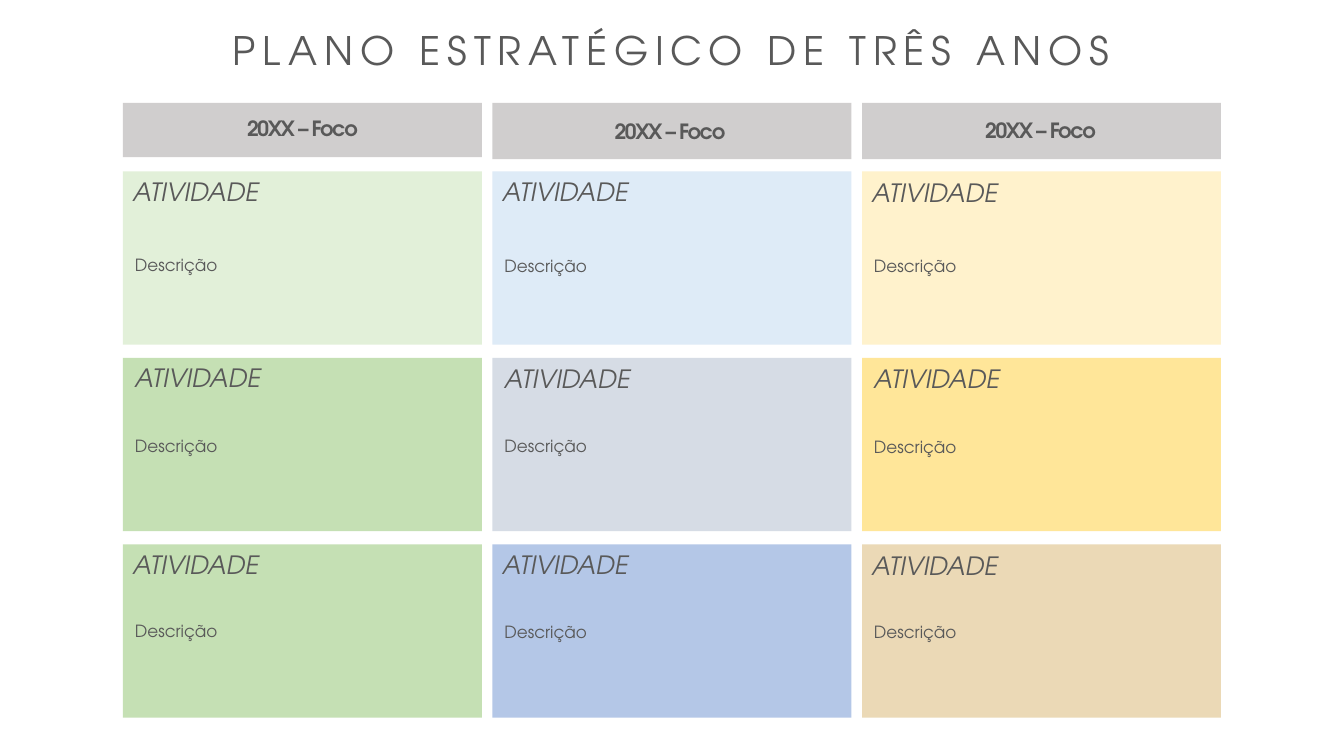
"""Build a three-year strategic plan slide."""
from dataclasses import dataclass

import pptx
import pptx.dml.color
import pptx.enum.shapes
import pptx.enum.text
import pptx.util
from pptx.util import Inches


@dataclass(frozen=True)
class Theme:
    """Colours, font and type sizes of the slide."""
    font: str = "TeX Gyre Adventor"
    text: str = "595959"
    header: str = "D0CECE"
    columns: tuple = (
        ("E2F0D9", "C5E0B4", "C5E0B4"),
        ("DEEBF7", "D6DCE5", "B4C7E7"),
        ("FFF2CC", "FFE699", "EBD9B6"),
    )
    title_size: int = 28
    header_size: int = 15
    activity_size: int = 18
    description_size: int = 12


THEME = Theme()
GRID_LEFT, GRID_RIGHT = 1.22, 12.11
CARD_WIDTH, CARD_HEIGHT = 3.56, 1.72
COLUMN_STEP = (GRID_RIGHT - GRID_LEFT - CARD_WIDTH) / 2
HEADER_TOP = 1.02
CARD_TOP, ROW_STEP = 1.7, 1.85
HEADER_HEIGHTS = (0.54, 0.56, 0.56)
HEADER_TEXT_TOPS = (1.1, 1.13, 1.12)
HEADER_TEXT_SHIFTS = (0, -0.02, -0.01)
ACTIVITY_SHIFTS = (0, 0.02, 0)
COLUMN_TEXT_DROPS = (0, 0.005, 0.01)
DESCRIPTION_TOPS = (2.48, 4.27, 6.11)


def write_text(box, text, size, bold=False, italic=False, centered=False, spacing=0):
    """Write one formatted paragraph into a text box or placeholder."""
    frame = box.text_frame
    frame.word_wrap = True
    frame.auto_size = pptx.enum.text.MSO_AUTO_SIZE.SHAPE_TO_FIT_TEXT
    frame.vertical_anchor = pptx.enum.text.MSO_ANCHOR.TOP
    para = frame.paragraphs[0]
    alignment = pptx.enum.text.PP_ALIGN
    para.alignment = alignment.CENTER if centered else alignment.LEFT
    span = para.add_run()
    span.text = text
    span.font.name = THEME.font
    span.font.size = pptx.util.Pt(size)
    span.font.bold = bold
    span.font.italic = italic
    span.font.color.rgb = pptx.dml.color.RGBColor.from_string(THEME.text)
    if spacing:
        span.font._element.set("spc", str(spacing * 100))


def add_title(page, text):
    """Place and fill the title placeholder."""
    title = page.shapes.title
    title.left, title.top = Inches(0.18), Inches(0.21)
    title.width, title.height = Inches(12.95), Inches(0.57)
    write_text(title, text, THEME.title_size, centered=True, spacing=5)


def add_panel(page, left, top, height, color):
    """Add a plain coloured rectangle one column wide."""
    panel = page.shapes.add_shape(
        pptx.enum.shapes.MSO_SHAPE.RECTANGLE,
        Inches(left), Inches(top), Inches(CARD_WIDTH), Inches(height))
    panel.shadow.inherit = False
    panel.fill.solid()
    panel.fill.fore_color.rgb = pptx.dml.color.RGBColor.from_string(color)
    panel.line.fill.background()


def add_label(page, left, top, height, text, size, **style):
    """Add a text box one column wide."""
    box = page.shapes.add_textbox(
        Inches(left), Inches(top), Inches(CARD_WIDTH), Inches(height))
    write_text(box, text, size, **style)


def add_header(page, column, left):
    """Add the year heading of a column."""
    add_panel(page, left, HEADER_TOP, HEADER_HEIGHTS[column], THEME.header)
    add_label(page, left + HEADER_TEXT_SHIFTS[column], HEADER_TEXT_TOPS[column], 0.35,
              "20XX – Foco", THEME.header_size, bold=True, centered=True, spacing=-1)


def add_card(page, column, row, left):
    """Add one activity card with its heading and description."""
    top = CARD_TOP + row * ROW_STEP
    drop = COLUMN_TEXT_DROPS[column]
    add_panel(page, left, top, CARD_HEIGHT, THEME.columns[column][row])
    add_label(page, left + ACTIVITY_SHIFTS[row], top + drop, 0.4,
              "ATIVIDADE", THEME.activity_size, italic=True)
    add_label(page, left + 0.02, DESCRIPTION_TOPS[row] + drop, 0.3,
              "Descrição", THEME.description_size)


def main():
    """Build and save the deck."""
    deck = pptx.Presentation()
    deck.slide_width, deck.slide_height = Inches(13.33), Inches(7.5)
    page = deck.slides.add_slide(deck.slide_layouts[5])
    add_title(page, "PLANO ESTRATÉGICO DE TRÊS ANOS")
    for column, colors in enumerate(THEME.columns):
        left = GRID_LEFT + column * COLUMN_STEP
        add_header(page, column, left)
        for row in range(len(colors)):
            add_card(page, column, row, left)
    deck.save("out.pptx")


if __name__ == "__main__":
    main()
